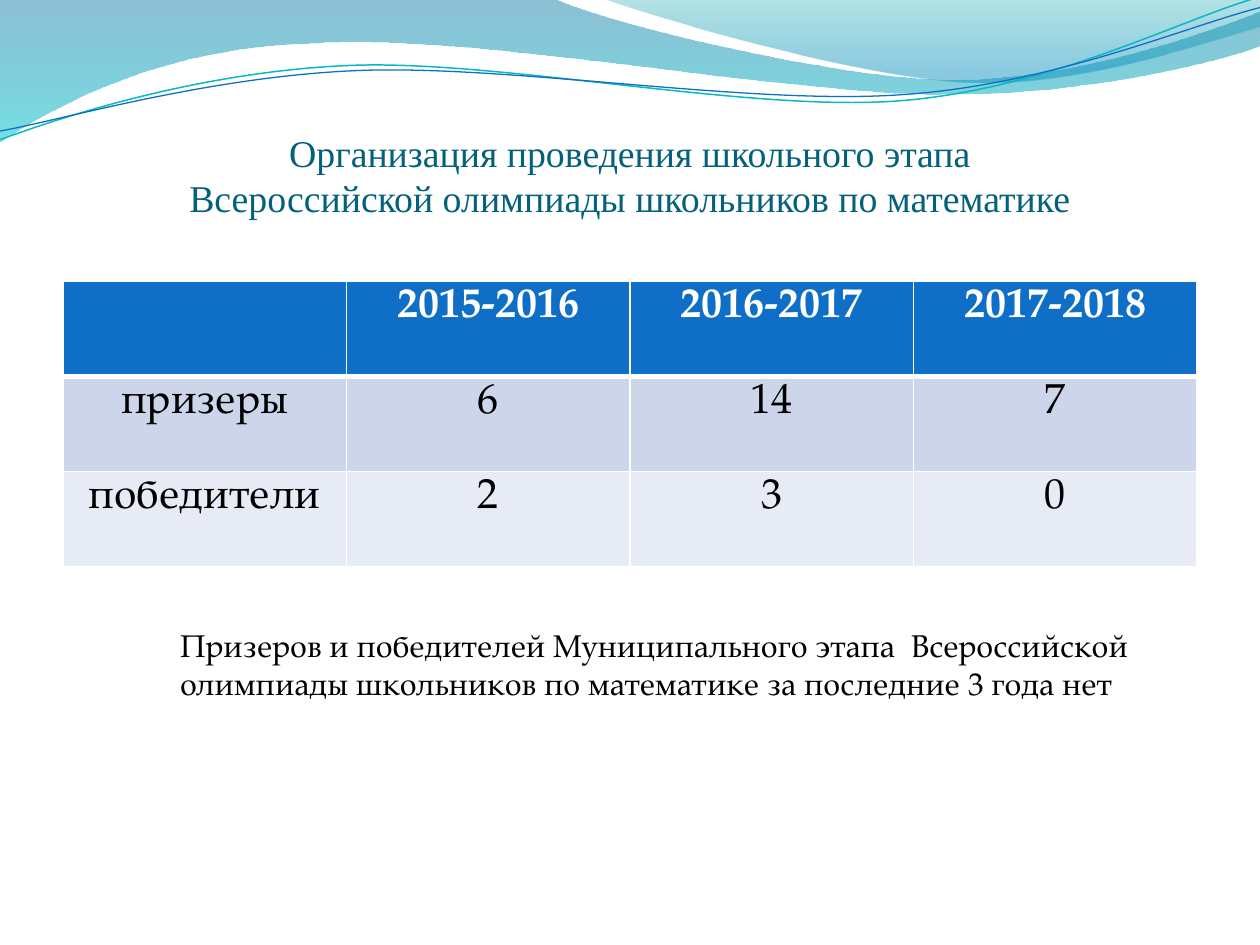
import dataclasses

import lxml.etree
import pptx
import pptx.dml.color
import pptx.enum.text
import pptx.oxml.ns
import pptx.util

Pt = pptx.util.Pt
RGB = pptx.dml.color.RGBColor.from_string
qn = pptx.oxml.ns.qn
ALIGN = pptx.enum.text.PP_ALIGN
ANCHOR = pptx.enum.text.MSO_ANCHOR
AUTO_SIZE = pptx.enum.text.MSO_AUTO_SIZE


@dataclasses.dataclass(frozen=True)
class Theme:
    title: str = "04617B"
    text: str = "000000"
    white: str = "FFFFFF"
    header: str = "0F6FC6"
    bands: tuple = ("CCD5EA", "E7EBF5")
    back_wave: tuple = ((0, "0074A1", 45), (1, "00C6CF", 55))
    front_wave: tuple = ((0, "00A1A9", 30), (0.8, "008BBF", 45))
    teal_line: str = "0AB8BF"
    blue_line: str = "0F6FC6"
    title_font: str = "Times New Roman"
    body_font: str = "TeX Gyre Pagella"
    title_size: float = 21.6
    table_size: float = 24
    note_size: float = 18


@dataclasses.dataclass(frozen=True)
class Box:
    left: float
    top: float
    width: float
    height: float

    def place(self, shape):
        shape.left, shape.top = Pt(self.left), Pt(self.top)
        shape.width, shape.height = Pt(self.width), Pt(self.height)


THEME = Theme()
LINE_TILT = 357.3

BACK_WAVE = [
    (0, 0), (316.8, -0.7),
    (342.7, 12.2, 478.1, 45.4, 545.8, 45.4),
    (614.2, 45.4, 689.8, 18.7, 720, 6.5),
    (720.7, 25.9),
    (707.8, 31.7, 626.4, 54.7, 537.1, 54),
    (447.8, 54, 275, 20.2, 185, 24.5),
    (92.9, 25.9, 33.1, 59.8, -0.7, 81.4),
]
FRONT_WAVE = [
    (344.9, -0.7),
    (366.5, 7.9, 491, 44.6, 553.7, 46.8),
    (616.3, 49.7, 691.9, 23, 720, 15.1),
    (720, 0),
]
TEAL_LINE = [
    (-1.4, 62.9),
    (33.8, 51.7, 114.1, 29.4, 199.8, 29.9),
    (284.9, 30.3, 425.8, 67.3, 512.4, 64.9),
    (599, 62.4, 676.5, 25.7, 720.2, 15.6),
]
BLUE_LINE = [
    (-1.1, 57.9),
    (32.9, 53.7, 118.3, 32.5, 204.1, 33),
    (290.6, 33.4, 428.9, 63.8, 515.5, 61.4),
    (601.3, 59.6, 678.4, 30.1, 721.4, 21.3),
]
RESULTS = [
    ("", "2015-2016", "2016-2017", "2017-2018"),
    ("призеры", "6", "14", "7"),
    ("победители", "2", "3", "0"),
]


def write_text(para, text, font=THEME.body_font, size=THEME.note_size,
               color=THEME.text, bold=False, align=ALIGN.LEFT):
    para.alignment = align
    span = para.add_run()
    span.text = text
    span.font.name, span.font.size, span.font.bold = font, Pt(size), bold
    span.font.color.rgb = RGB(color)


def bend_lines(shape, segments):
    lines = iter(list(shape.element.iter(qn("a:lnTo"))))
    for segment in segments[1:]:
        steps = [next(lines) for _ in range(len(segment) // 2)]
        if len(steps) == 3:
            curve = lxml.etree.Element(qn("a:cubicBezTo"))
            steps[0].addprevious(curve)
            for step in steps:
                curve.append(step[0])
                step.getparent().remove(step)


def draw_outline(page, box, segments, close):
    points = [(Pt(box.left + segment[i]), Pt(box.top + segment[i + 1]))
              for segment in segments for i in range(0, len(segment), 2)]
    builder = page.shapes.build_freeform(*points[0])
    builder.add_line_segments(points[1:], close=close)
    shape = builder.convert_to_shape()
    bend_lines(shape, segments)
    shape.shadow.inherit = False
    return shape


def draw_waves(page, box):
    for segments, stops in ((BACK_WAVE, THEME.back_wave), (FRONT_WAVE, THEME.front_wave)):
        wave = draw_outline(page, box, segments, True)
        wave.line.fill.background()
        wave.fill.gradient()
        wave.fill.gradient_angle = 270
        for stop, (position, color, _) in zip(wave.fill.gradient_stops, stops):
            stop.position = position
            stop.color.rgb = RGB(color)
        for node, (_, _, opacity) in zip(wave.element.spPr.iter(qn("a:srgbClr")), stops):
            lxml.etree.SubElement(node, qn("a:alpha"), val=str(opacity * 1000))
    for segments, color, width in ((TEAL_LINE, THEME.teal_line, 0.85),
                                   (BLUE_LINE, THEME.blue_line, 0.75)):
        curve = draw_outline(page, box, segments, False)
        curve.rotation = LINE_TILT
        curve.fill.background()
        curve.line.color.rgb = RGB(color)
        curve.line.width = Pt(width)


def place_title(page, box, lines):
    title = page.shapes.title
    box.place(title)
    frame = title.text_frame
    frame.word_wrap = True
    frame.auto_size = AUTO_SIZE.NONE
    frame.vertical_anchor = ANCHOR.BOTTOM
    frame.margin_left = frame.margin_right = 0
    frame.margin_bottom = Pt(54)
    para = frame.paragraphs[0]
    para.line_spacing = Pt(25.7)
    for index, line in enumerate(lines):
        if index:
            para.add_line_break()
        write_text(para, line, font=THEME.title_font, size=THEME.title_size,
                   color=THEME.title, align=ALIGN.CENTER)


def add_borders(cell, widths):
    properties = cell._tc.get_or_add_tcPr()
    for side, width in zip("LRTB", widths):
        border = lxml.etree.SubElement(properties, qn(f"a:ln{side}"), w=str(Pt(width)))
        fill = lxml.etree.SubElement(border, qn("a:solidFill"))
        lxml.etree.SubElement(fill, qn("a:srgbClr"), val=THEME.white)


def place_table(page, box, rows):
    table = page.shapes.add_table(len(rows), len(rows[0]), Pt(box.left), Pt(box.top),
                                  Pt(box.width), Pt(box.height)).table
    for row_index, row in enumerate(rows):
        is_header = row_index == 0
        fill = THEME.header if is_header else THEME.bands[(row_index - 1) % 2]
        top, bottom = 3 if row_index == 1 else 1, 3 if is_header else 1
        for column_index, text in enumerate(row):
            cell = table.cell(row_index, column_index)
            add_borders(cell, (1, 1, top, bottom))
            cell.fill.solid()
            cell.fill.fore_color.rgb = RGB(fill)
            if text:
                write_text(cell.text_frame.paragraphs[0], text, size=THEME.table_size,
                           color=THEME.white if is_header else THEME.text,
                           bold=is_header, align=ALIGN.CENTER)


def place_note(page, box, text):
    note = page.shapes.add_textbox(Pt(box.left), Pt(box.top), Pt(box.width), Pt(box.height))
    note.text_frame.word_wrap = True
    write_text(note.text_frame.paragraphs[0], text)


def main():
    deck = pptx.Presentation()
    deck.slide_width, deck.slide_height = Pt(720), Pt(540)
    page = deck.slides.add_slide(deck.slide_layouts[5])
    draw_waves(page, Box(0, 0, 720, 82))
    place_title(page, Box(36, 72, 648, 108),
                ("Организация проведения школьного этапа",
                 "Всероссийской олимпиады школьников по математике"))
    place_table(page, Box(36, 160.7, 648, 163), RESULTS)
    place_note(page, Box(95.8, 354.2, 576, 51),
               "Призеров и победителей Муниципального этапа  Всероссийской "
               "олимпиады школьников по математике за последние 3 года нет")
    deck.save("out.pptx")


if __name__ == "__main__":
    main()
